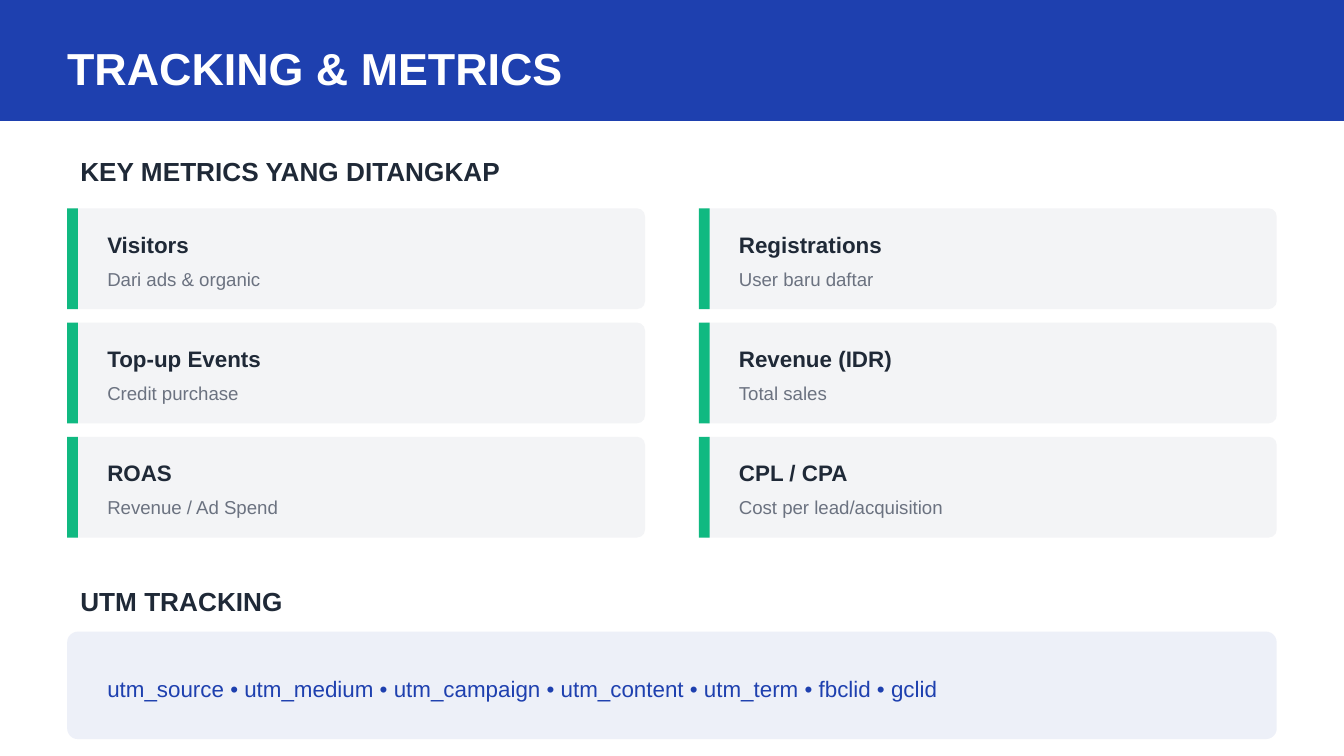
from lxml.etree import SubElement
from pptx import Presentation
from pptx.dml.color import RGBColor
from pptx.enum.shapes import MSO_SHAPE
from pptx.enum.text import MSO_ANCHOR
from pptx.oxml.ns import qn
from pptx.util import Pt

TITLE = "TRACKING & METRICS"
METRICS_HEADING = "KEY METRICS YANG DITANGKAP"
METRICS = [
    ("Visitors", "Dari ads & organic"),
    ("Registrations", "User baru daftar"),
    ("Top-up Events", "Credit purchase"),
    ("Revenue (IDR)", "Total sales"),
    ("ROAS", "Revenue / Ad Spend"),
    ("CPL / CPA", "Cost per lead/acquisition"),
]
UTM_HEADING = "UTM TRACKING"
UTM_FIELDS = ["utm_source", "utm_medium", "utm_campaign", "utm_content",
              "utm_term", "fbclid", "gclid"]

COLORS = {
    "blue": "1E40AF",
    "green": "10B981",
    "card": "F3F4F6",
    "dark": "1F2937",
    "muted": "6B7280",
    "white": "FFFFFF",
}
FONT = "Arial"
EMU_PER_PX = 9144
SLIDE_W = 1000
MARGIN = 50
CONTENT_W = SLIDE_W - 2 * MARGIN
COLUMNS = 2
CARD_W, CARD_H = 430, 75
COLUMN_GAP, ROW_GAP = 40, 10
CARDS_TOP = 155
ACCENT_W = 8
INDENT = 20


def px(*lengths):
    return [length * EMU_PER_PX for length in lengths]


def add_panel(slide, box, color, corner=None, opacity=None):
    kind = MSO_SHAPE.RECTANGLE if corner is None else MSO_SHAPE.ROUNDED_RECTANGLE
    panel = slide.shapes.add_shape(kind, *px(*box))
    if corner is not None:
        panel.adjustments[0] = corner
    panel.shadow.inherit = False
    panel.line.fill.background()
    panel.fill.solid()
    panel.fill.fore_color.rgb = RGBColor.from_string(COLORS[color])
    if opacity is not None:
        fill_color = panel.fill._xPr.find(qn("a:solidFill"))[0]
        SubElement(fill_color, qn("a:alpha"), val=str(opacity * 1000))


def add_label(slide, box, text, size, color, bold=False, inset=True):
    label = slide.shapes.add_textbox(*px(*box))
    frame = label.text_frame
    frame.word_wrap = True
    frame.vertical_anchor = MSO_ANCHOR.MIDDLE
    if not inset:
        frame.margin_left = frame.margin_right = 0
        frame.margin_top = frame.margin_bottom = 0
    frame.text = text
    font = frame.paragraphs[0].runs[0].font
    font.name = FONT
    font.size = Pt(size)
    font.bold = bold
    font.color.rgb = RGBColor.from_string(COLORS[color])


def add_metric(slide, left, top, name, detail):
    add_panel(slide, (left, top, CARD_W, CARD_H), "card", corner=0.08)
    add_panel(slide, (left, top, ACCENT_W, CARD_H), "green")
    add_label(slide, (left + INDENT, top + 12, 300, 30), name, 12, "dark", bold=True)
    add_label(slide, (left + INDENT, top + 40, 300, 25), detail, 10, "muted")


def main():
    prs = Presentation()
    prs.slide_width = SLIDE_W * EMU_PER_PX
    prs.slide_height = prs.slide_width * 9 // 16
    slide = prs.slides.add_slide(prs.slide_layouts[6])

    add_panel(slide, (0, 0, SLIDE_W, 90), "blue")
    add_label(slide, (MARGIN, 20, CONTENT_W, 60), TITLE, 24, "white",
              bold=True, inset=False)

    for top, heading in ((110, METRICS_HEADING), (430, UTM_HEADING)):
        add_label(slide, (MARGIN, top, 400, 35), heading, 14, "dark", bold=True)

    for index, (name, detail) in enumerate(METRICS):
        row, column = divmod(index, COLUMNS)
        left = MARGIN + column * (CARD_W + COLUMN_GAP)
        top = CARDS_TOP + row * (CARD_H + ROW_GAP)
        add_metric(slide, left, top, name, detail)

    add_panel(slide, (MARGIN, 470, CONTENT_W, 80), "blue", corner=0.1, opacity=8)
    add_label(slide, (MARGIN + INDENT, 495, CONTENT_W - 2 * INDENT, 35),
              " • ".join(UTM_FIELDS), 12, "blue")

    prs.save("out.pptx")


if __name__ == "__main__":
    main()
